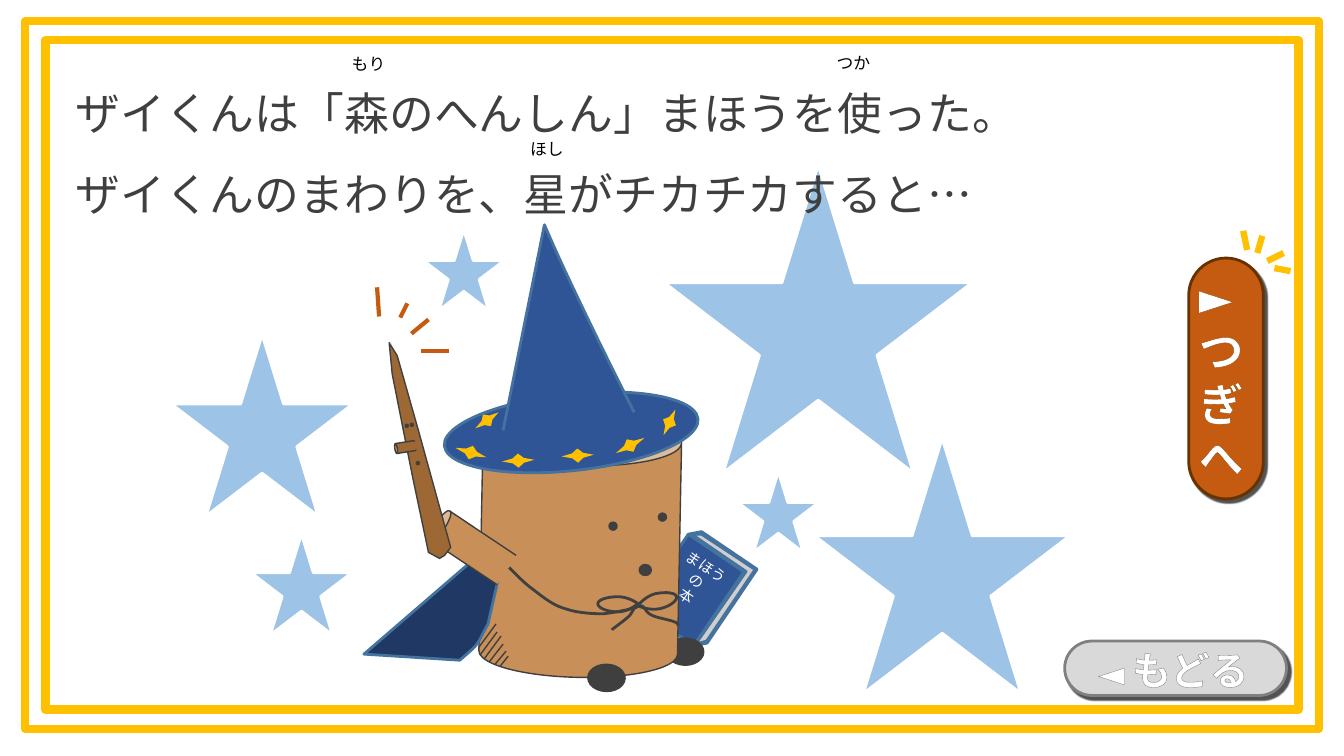
from lxml import etree
from pptx import Presentation
from pptx.dml.color import RGBColor
from pptx.enum.shapes import MSO_CONNECTOR, MSO_SHAPE as SHAPE
from pptx.enum.text import MSO_ANCHOR, MSO_AUTO_SIZE, PP_ALIGN
from pptx.oxml import parse_xml
from pptx.oxml.ns import nsdecls, qn
from pptx.util import Inches, Pt

ARIAL, NOTO = "Arial", "Noto Sans CJK JP"
GOLD, ORANGE, WHITE = "FFC000", "C55A11", "FFFFFF"
SKY, BLUE, NAVY, BLUE_EDGE = "9DC3E6", "2F5597", "203864", "43739E"
WOOD, CUT_WOOD, WAND, INK = "C89058", "DDB896", "9D6833", "3F3F3F"


def rgb(hex_color):
    return RGBColor.from_string(hex_color)


def paint(shape, fill, line, width):
    shape.shadow.inherit = False
    if fill:
        shape.fill.solid()
        shape.fill.fore_color.rgb = rgb(fill)
    else:
        shape.fill.background()
    if line:
        shape.line.color.rgb = rgb(line)
        shape.line.width = Pt(width)
    else:
        shape.line.fill.background()


def cubic(start, curve, steps=10):
    """Points along a Bezier curve (x1, y1, x2, y2, x, y) after its start."""
    controls = [start, curve[:2], curve[2:4], curve[4:]]
    for step in range(1, steps + 1):
        t = step / steps
        weights = ((1 - t) ** 3, 3 * t * (1 - t) ** 2, 3 * t * t * (1 - t), t ** 3)
        yield tuple(sum(w * c[axis] for w, c in zip(weights, controls)) for axis in (0, 1))


class Region:
    """Draws parts at offsets from the corner of a region of the slide."""

    def __init__(self, shapes, left, top):
        self.shapes, self.left, self.top = shapes, left, top

    def at(self, x, y):
        return Inches(self.left + x), Inches(self.top + y)

    def shape(self, kind, x, y, width, height, fill=None, line=None, weight=1, turn=0, adjust=None):
        part = self.shapes.add_shape(kind, *self.at(x, y), Inches(width), Inches(height))
        part.rotation = turn
        if adjust is not None:
            part.adjustments[0] = adjust
        paint(part, fill, line, weight)
        return part

    def outline(self, start, segments, fill=None, line=None, weight=1, close=False):
        """Segments are points (x, y) or Bezier curves (x1, y1, x2, y2, x, y)."""
        points = [start]
        for segment in segments:
            points.extend([segment] if len(segment) == 2 else cubic(points[-1], segment))
        builder = self.shapes.build_freeform(*self.at(*start), scale=1.0)
        builder.add_line_segments([self.at(*point) for point in points[1:]], close=close)
        paint(builder.convert_to_shape(), fill, line, weight)

    def strokes(self, ends, color, weight):
        for x1, y1, x2, y2 in ends:
            stroke = self.shapes.add_connector(MSO_CONNECTOR.STRAIGHT, *self.at(x1, y1), *self.at(x2, y2))
            stroke.line.color.rgb = rgb(color)
            stroke.line.width = Pt(weight)
            etree.SubElement(stroke._element.spPr, qn("a:effectLst"))

    def text(self, x, y, width, height, lines, size, color, turn=0, align=None, spacings=()):
        box = self.shapes.add_textbox(*self.at(x, y), Inches(width), Inches(height))
        box.rotation = turn
        frame = box.text_frame
        frame.word_wrap = True
        frame.auto_size = MSO_AUTO_SIZE.SHAPE_TO_FIT_TEXT
        frame.text = "\n".join(lines)
        for paragraph in frame.paragraphs:
            paragraph.alignment = align
            font = paragraph.font
            font.name, font.size, font.color.rgb = ARIAL, Pt(size), rgb(color)
        for paragraph, spacing in zip(frame.paragraphs, spacings):
            paragraph.line_spacing = spacing
        return frame


def outlined_run(paragraph, text, size, edge, edge_width):
    run = paragraph.add_run()
    run.text = text
    font = run.font
    font.name, font.size, font.bold, font.color.rgb = NOTO, Pt(size), True, rgb(WHITE)
    run._r.get_or_add_rPr().insert(0, parse_xml(
        f'<a:ln {nsdecls("a")} w="{Pt(edge_width)}"><a:solidFill>'
        f'<a:srgbClr val="{edge}"/></a:solidFill></a:ln>'))


def pill(region, width, height, fill, edge):
    button = region.shape(SHAPE.ROUNDED_RECTANGLE, 0, 0, width, height, fill, edge, 2, adjust=0.5)
    button._element.spPr.find(qn("a:effectLst")).append(parse_xml(
        f'<a:outerShdw {nsdecls("a")} blurRad="{Pt(1)}" dist="{Pt(3)}" dir="3000000" '
        'algn="tl" rotWithShape="0"><a:srgbClr val="000000"><a:alpha val="68000"/>'
        '</a:srgbClr></a:outerShdw>'))


def background(shapes, width, height):
    page = Region(shapes, 0, 0)
    for x, y, size in [(6.59, 1.64, 3.05), (8.08, 4.35, 2.53), (1.7, 3.32, 1.8),
                       (2.49, 5.3, 1), (7.32, 4.68, 0.8), (4.2, 2.28, 0.8)]:
        page.shape(SHAPE.STAR_5_POINT, x, y, size, size, SKY, WHITE, 2)
    for x, y in [(0.25, 0.21), (0.45, 0.4)]:
        page.shape(SHAPE.RECTANGLE, x, y, width - 2 * x, height - 0.06 - 2 * y, None, GOLD, 6)


def story(shapes, left, top):
    region = Region(shapes, left, top)
    region.text(0, 0, 11.54, 1.99,
                ["ザイくんは「森のへんしん」まほうを使った。", "ザイくんのまわりを、星がチカチカすると…"],
                32, INK, spacings=(2.0, 1.5))
    for x, y, reading in [(2.74, 0.21, "もり"), (7.55, 0.2, "つか"), (4.51, 1.06, "ほし")]:
        region.text(x, y, 0.82, 0.3, [reading], 12, "000000")


def spell_book(region):
    region.shape(SHAPE.CUBE, 3.54, 3.35, 0.76, 0.98, BLUE, BLUE_EDGE, 2, 34.1, 0.125)
    region.text(3.54, 3.45, 0.71, 0.67, ["まほう", "の", "本"], 10.5, WHITE, 34.1, PP_ALIGN.CENTER)
    region.outline((3.96, 3.3), [(3.86, 3.3), (4.4, 3.67), (3.9, 4.39), (4.01, 4.36), (4.49, 3.65)],
                   "D0CECE", BLUE_EDGE, 2, close=True)


def log_body(region):
    foot, eye = (0.37, 0.27), (0.08, 0.08)
    region.shape(SHAPE.OVAL, 3.61, 4.33, *foot, INK, INK, turn=1.1)
    region.shape(SHAPE.CAN, 1.77, 2.13, 1.97, 2.59, WOOD, INK, turn=1.1)
    for x, y, size in [(3.04, 3.18, eye), (3.53, 3.09, eye), (3.34, 3.6, (0.12, 0.11)), (2.83, 4.59, foot)]:
        region.shape(SHAPE.OVAL, x, y, *size, INK, INK, turn=1.1)
    region.strokes([(1.92, 4.19, 1.75, 4.42), (1.93, 4.27, 1.76, 4.5), (1.97, 4.31, 1.8, 4.54),
                    (1.99, 4.39, 1.85, 4.57), (2.02, 4.46, 1.91, 4.59), (2.04, 4.51, 1.96, 4.61)], INK, 1)


def hat(region):
    region.shape(SHAPE.OVAL, 1.4, 1.91, 2.53, 0.76, BLUE, BLUE_EDGE, 2, 353.9)
    region.outline((1.99, 2.27), [(2.4, 0.23), (2.67, 0.87, 3.29, 2.09, 3.29, 2.09)], BLUE, BLUE_EDGE, 2)
    for x, y, length, turn in [(3.18, 2.26, 0.32, 62), (3.57, 2.05, 0.28, 25), (2.66, 2.36, 0.32, 86.9),
                               (2.07, 2.41, 0.32, 86.9), (1.6, 2.33, 0.32, 107), (1.76, 2.03, 0.28, 55.3)]:
        region.shape(SHAPE.STAR_4_POINT, x, y, 0.14, length, GOLD, turn=turn, adjust=0.246)


def cape(region):
    cords = [
        ((2.93, 3.99), [(2.93, 3.95, 3.02, 3.92, 3.13, 3.92), (3.24, 3.92, 3.33, 3.99, 3.33, 3.99),
                        (3.32, 3.99, 3.24, 4.07, 3.13, 4.07), (3.02, 4.07, 2.93, 4.03, 2.93, 3.99)]),
        ((3.71, 3.92), [(3.72, 3.96, 3.64, 4.02, 3.54, 4.04), (3.43, 4.06, 3.33, 4.01, 3.32, 4.01),
                        (3.33, 4.01, 3.39, 3.92, 3.5, 3.89), (3.61, 3.87, 3.7, 3.88, 3.71, 3.92)]),
        ((3.07, 4.25), [(3.07, 4.24, 3.19, 4.16, 3.23, 4.12), (3.28, 4.08, 3.28, 4.01, 3.34, 4.01),
                        (3.4, 4, 3.39, 4.07, 3.46, 4.1), (3.52, 4.14, 3.77, 4.16, 3.72, 4.21)]),
        ((2.05, 3.63), [(2.05, 3.63, 2.19, 3.78, 2.29, 3.85), (2.38, 3.92, 2.49, 4.01, 2.61, 4.04),
                        (2.72, 4.08, 2.87, 4.09, 2.98, 4.09), (3.1, 4.08, 3.37, 4.02, 3.31, 4.02)]),
    ]
    for start, curves in cords:
        region.outline(start, curves, None, "404040", 2)
    region.outline((1.78, 3.48), [(0.61, 4.49), (1.56, 4.55), (1.77, 4.37, 1.72, 4.41, 1.84, 4.19),
                                  (2, 3.49)], NAVY, BLUE_EDGE, 2, close=True)


def arm_and_wand(region):
    region.outline((1.93, 3.8), [(1.27, 3.36), (1.46, 3.07), (2.12, 3.51)], WOOD, close=True)
    region.strokes([(1.93, 3.8, 1.27, 3.36), (1.46, 3.07, 2.12, 3.51)], INK, 1)
    region.outline((1.27, 3.36), [(1.24, 3.35, 1.27, 3.27, 1.32, 3.19), (1.38, 3.11, 1.44, 3.05, 1.46, 3.07),
                                  (1.49, 3.08, 1.46, 3.16, 1.41, 3.24), (1.35, 3.32, 1.29, 3.38, 1.27, 3.36)],
                   CUT_WOOD, INK, close=True)
    region.outline((0.86, 1.4), [(0.89, 1.71), (1.09, 2.72), (1.25, 3.48), (1.36, 3.54), (1.41, 3.51),
                                 (1.47, 3.43), (1.15, 2.27), (0.94, 1.53)], WAND, "404040", close=True)
    region.shape(SHAPE.CAN, 0.97, 2.33, 0.1, 0.21, WAND, INK, turn=261.1)
    region.shape(SHAPE.OVAL, 1.07, 2.38, 0.11, 0.08, WAND, turn=341.4)
    for x, y in [(1.13, 2.58), (1.02, 2.21), (1.07, 2.2)]:
        region.shape(SHAPE.OVAL, x, y, 0.03, 0.03, INK, INK)
    region.strokes([(1.25, 1.17, 1.08, 1.31), (1.45, 1.48, 1.18, 1.48),
                    (0.74, 0.85, 0.76, 1.14), (1.04, 1.01, 0.97, 1.15)], ORANGE, 3)


def wizard(shapes, left, top):
    region = Region(shapes.add_group_shape().shapes, left, top)
    for part in (spell_book, log_body, hat, cape, arm_and_wand):
        part(region)


def next_button(shapes, left, top):
    region = Region(shapes, left, top)
    pill(region, 0.74, 2.39, ORANGE, "663300")
    label = region.text(0, -0.02, 0.73, 2.39, [""], 32, WHITE)
    label.vertical_anchor = MSO_ANCHOR.MIDDLE
    label._txBody.bodyPr.set("vert", "wordArtVertRtl")
    outlined_run(label.paragraphs[0], "►つぎへ", 32, "8E4700", 1)
    sparks = Region(shapes.add_group_shape().shapes, left, top)
    sparks.strokes([(0.54, -0.27, 0.58, -0.08), (0.73, -0.22, 0.68, -0.05),
                    (1.01, 0.13, 0.85, 0.1), (0.94, -0.05, 0.78, 0.03)], GOLD, 4.5)


def back_button(shapes, left, top):
    region = Region(shapes, left, top)
    pill(region, 2.2, 0.54, "D9D9D9", "808080")
    label = region.text(-0.02, 0, 2.2, 0.57, [""], 28, WHITE, align=PP_ALIGN.CENTER).paragraphs[0]
    outlined_run(label, "◄ ", 24, "808080", 1)
    outlined_run(label, "もどる", 28, "808080", 1.5)


def main():
    deck = Presentation()
    deck.slide_width, deck.slide_height = Inches(13.33), Inches(7.5)
    shapes = deck.slides.add_slide(deck.slide_layouts[6]).shapes
    background(shapes, 13.33, 7.5)
    story(shapes, 0.65, 0.27)
    wizard(shapes, 3, 2)
    next_button(shapes, 11.79, 2.56)
    back_button(shapes, 10.56, 6.36)
    deck.save("out.pptx")


if __name__ == "__main__":
    main()
